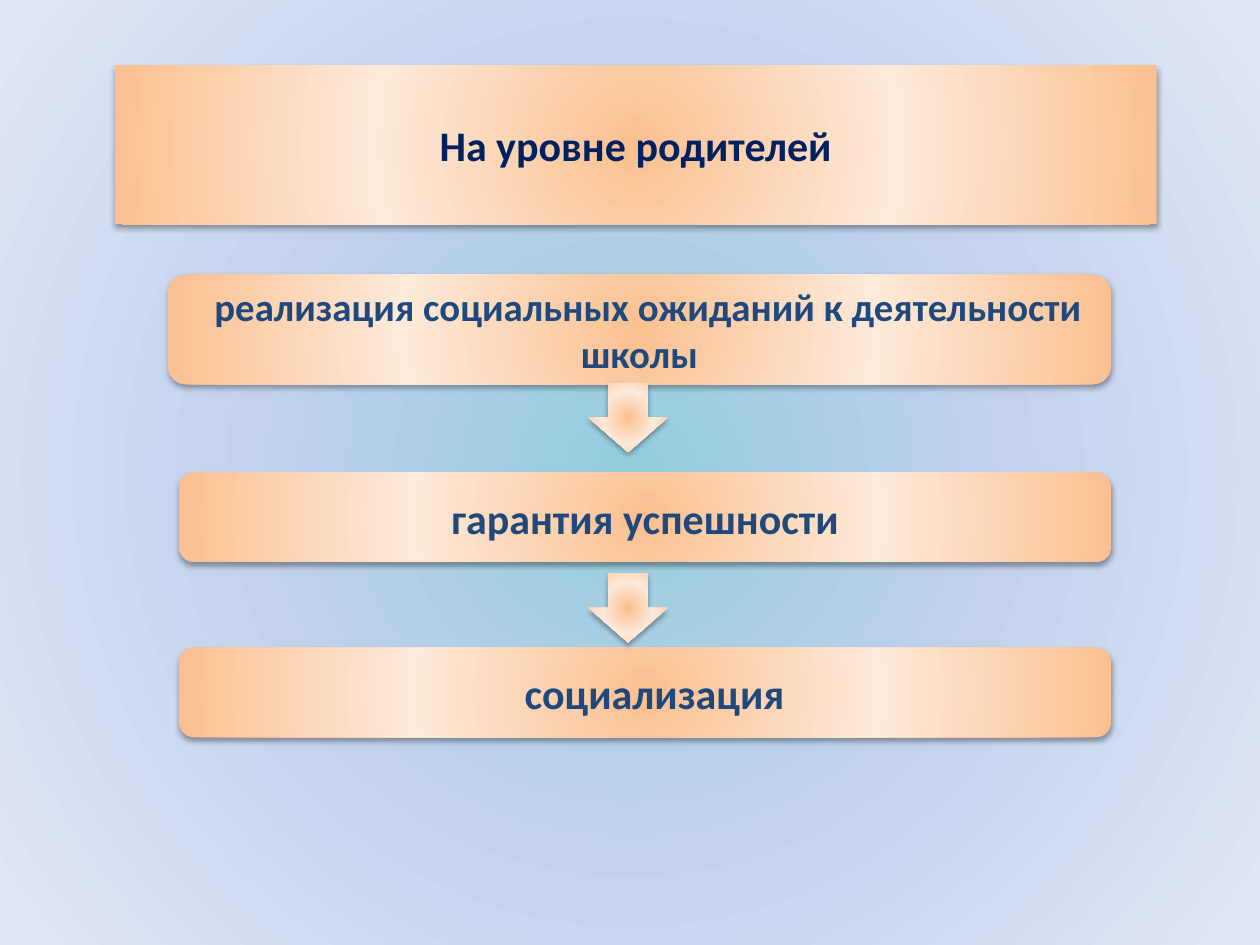
"""Build a slide with a heading and three steps joined by block arrows."""
from lxml.etree import SubElement
from pptx import Presentation
from pptx.dml.color import RGBColor
from pptx.enum.shapes import MSO_SHAPE
from pptx.enum.text import MSO_ANCHOR, PP_ALIGN
from pptx.oxml import parse_xml
from pptx.oxml.ns import nsdecls, qn
from pptx.util import Inches, Pt

PEACH = [(0, "FAC090"), (50, "FDEADA"), (100, "FAC090")]
SKY = [(0, "93CDDD"), (48, "C2D1ED"), (100, "E1E8F5")]


def fill_radial(fill, element, stops):
    """Fill an element with a circular gradient running out from its middle."""
    fill.solid()
    solid = element.find(".//" + qn("a:solidFill"))
    stop_xml = "".join(
        f'<a:gs pos="{share * 1000}"><a:srgbClr val="{color}"/></a:gs>' for share, color in stops
    )
    gradient = parse_xml(
        f'<a:gradFill {nsdecls("a")} rotWithShape="1"><a:gsLst>{stop_xml}</a:gsLst>'
        '<a:path path="circle"><a:fillToRect l="50000" t="50000" r="50000" b="50000"/></a:path>'
        "</a:gradFill>"
    )
    solid.getparent().replace(solid, gradient)


def style_shape(shape, text="", size=24, color="1F497D", indent=0):
    """Give a shape its peach gradient, soft shadow and centred bold text."""
    properties = shape.element.spPr
    fill_radial(shape.fill, properties, PEACH)
    shape.line.fill.background()
    if not hasattr(shape, "shadow"):
        effects = SubElement(properties, qn("a:effectLst"))
    else:
        shape.shadow.inherit = False
        effects = properties.find(qn("a:effectLst"))
    effects.append(parse_xml(
        f'<a:outerShdw {nsdecls("a")} blurRad="{Pt(3.1)}" dist="{Pt(1.8)}" dir="5400000" '
        'rotWithShape="0"><a:srgbClr val="000000"><a:alpha val="35000"/></a:srgbClr></a:outerShdw>'
    ))
    if not text:
        return
    frame = shape.text_frame
    frame.text = text
    frame.word_wrap = True
    frame.vertical_anchor = MSO_ANCHOR.MIDDLE
    paragraph = frame.paragraphs[0]
    paragraph.alignment = PP_ALIGN.CENTER
    if indent:
        paragraph._p.get_or_add_pPr().set("indent", str(Inches(indent)))
    font = paragraph.runs[0].font
    font.name, font.size, font.bold = "Calibri", Pt(size), True
    font.color.rgb = RGBColor.from_string(color)


presentation = Presentation()
presentation.slide_width, presentation.slide_height = Inches(10), Inches(7.5)
column = presentation.slide_width / 100
row = presentation.slide_height / 100
slide = presentation.slides.add_slide(presentation.slide_layouts[5])
fill_radial(slide.background.fill, slide.element, SKY)

title = slide.shapes.title
title.left, title.top = int(9.1 * column), int(6.93 * row)
title.width, title.height = int(82.7 * column), int(16.8 * row)
title.element.spPr.insert(1, parse_xml(
    f'<a:prstGeom {nsdecls("a")} prst="downArrowCallout"><a:avLst>'
    '<a:gd name="adj1" fmla="val 25000"/><a:gd name="adj2" fmla="val 25700"/>'
    '<a:gd name="adj3" fmla="val 26500"/><a:gd name="adj4" fmla="val 65700"/>'
    "</a:avLst></a:prstGeom>"
))
style_shape(title, "На уровне родителей", color="002060")

steps = [
    ("реализация социальных ожиданий к деятельности школы", 13.3, 29.07, 74.9, 11.6, 22.2, 0.14),
    ("гарантия успешности", 14.2, 50, 74, 9.47, 24, 0),
    ("социализация", 14.2, 68.53, 74, 9.47, 24, 0.15),
]
for text, left, top, width, height, size, indent in steps:
    step = slide.shapes.add_shape(
        MSO_SHAPE.ROUNDED_RECTANGLE,
        int(left * column), int(top * row), int(width * column), int(height * row),
    )
    style_shape(step, text, size, indent=indent)

for top in (40.53, 60.67):
    arrow = slide.shapes.add_shape(
        MSO_SHAPE.DOWN_ARROW,
        int(46.7 * column), int(top * row), int(6.3 * column), int(7.33 * row),
    )
    style_shape(arrow)

presentation.save("out.pptx")
